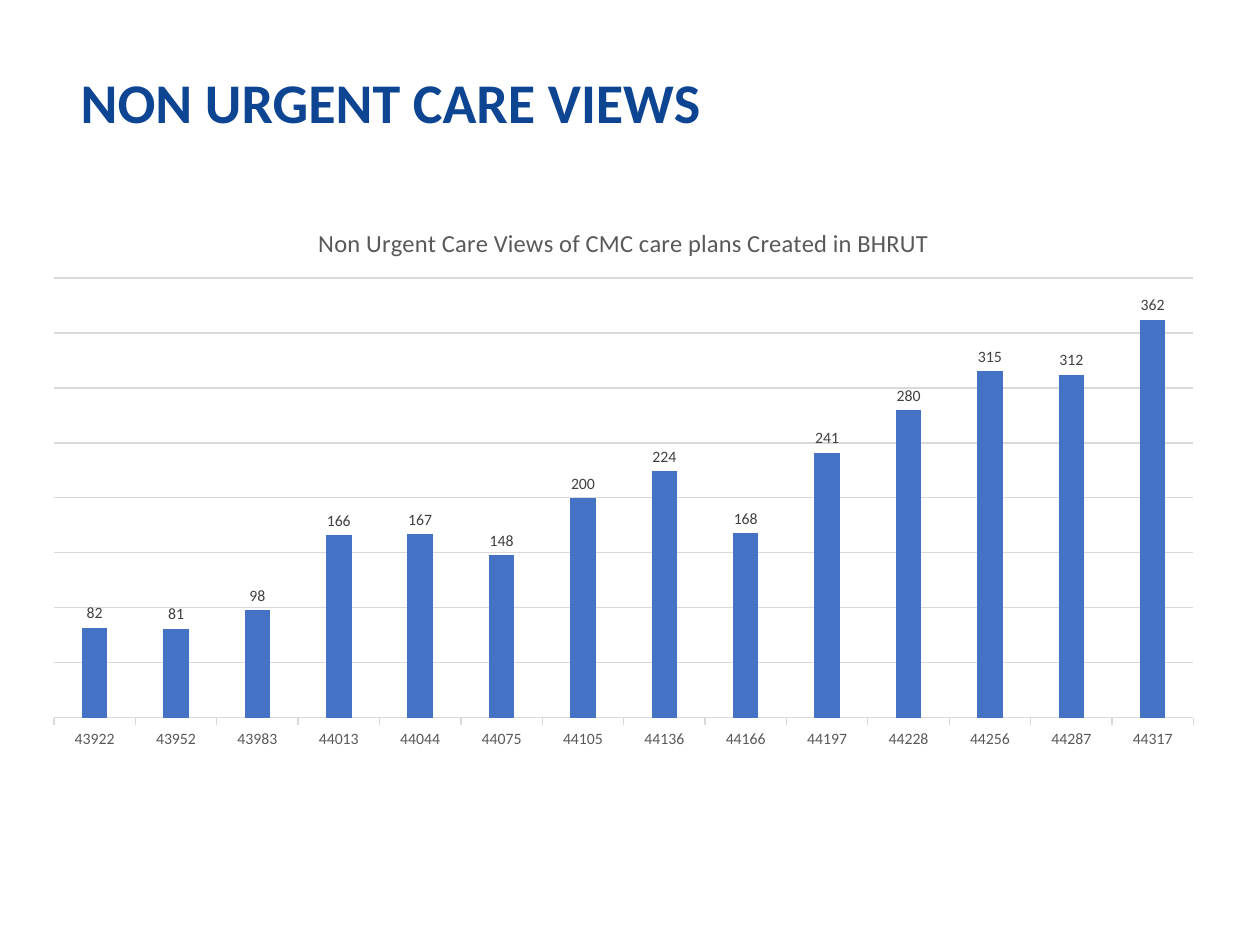
from dataclasses import dataclass

from pptx import Presentation
from pptx.chart.data import CategoryChartData
from pptx.dml.color import RGBColor
from pptx.enum import chart as ch, text
from pptx.util import Inches, Pt


@dataclass(frozen=True)
class Theme:
    face: str = "Calibri"
    navy: str = "0E4593"
    blue: str = "4472C4"
    black: str = "000000"
    dark: str = "404040"
    gray: str = "595959"
    rule: str = "D9D9D9"
    head: int = 32
    title: int = 14
    base: int = 10
    small: int = 9


THEME = Theme()
LEFT, WIDTH = Inches(0.24), Inches(9.42)
MONTHS = [43922, 43952, 43983, 44013, 44044, 44075, 44105,
          44136, 44166, 44197, 44228, 44256, 44287, 44317]
VIEWS = [82, 81, 98, 166, 167, 148, 200, 224, 168, 241, 280, 315, 312, 362]


def style(font, size, color, bold=False):
    font.name = THEME.face
    font.size = Pt(size)
    font.bold = bold
    font.color.rgb = RGBColor.from_string(color)


def rule(line):
    line.width = Pt(0.75)
    line.color.rgb = RGBColor.from_string(THEME.rule)


def add_title(slide, words):
    box = slide.shapes.title
    box.left, box.top, box.width, box.height = LEFT, Inches(0.36), WIDTH, Inches(0.88)
    frame = box.text_frame
    frame.text = words
    frame.word_wrap = True
    frame.auto_size = text.MSO_AUTO_SIZE.NONE
    frame.vertical_anchor = text.MSO_ANCHOR.MIDDLE
    frame.margin_left = Inches(0.4)
    para = frame.paragraphs[0]
    para.alignment = text.PP_ALIGN.LEFT
    style(para.font, THEME.head, THEME.navy, bold=True)


def add_bars(slide, title):
    data = CategoryChartData()
    data.categories = [str(month) for month in MONTHS]
    data.add_series("Series 1", VIEWS)
    chart = slide.shapes.add_chart(
        ch.XL_CHART_TYPE.COLUMN_CLUSTERED,
        LEFT, Inches(1.62), WIDTH, Inches(4.41), data).chart
    style(chart.font, THEME.base, THEME.black)
    chart.has_legend = False
    chart.has_title = True
    frame = chart.chart_title.text_frame
    frame.text = title
    style(frame.paragraphs[0].font, THEME.title, THEME.gray)
    chart.chart_title.include_in_layout = False
    format_axes(chart)
    format_plot(chart.plots[0])


def format_axes(chart):
    months, views = chart.category_axis, chart.value_axis
    style(months.tick_labels.font, THEME.small, THEME.gray)
    months.major_tick_mark = ch.XL_TICK_MARK.OUTSIDE
    months.minor_tick_mark = ch.XL_TICK_MARK.NONE
    rule(months.format.line)
    views.visible = False
    views.minimum_scale, views.maximum_scale, views.major_unit = 0, 400, 50
    views.has_major_gridlines = True
    rule(views.major_gridlines.format.line)


def format_plot(plot):
    plot.gap_width, plot.overlap = 219, -27
    plot.vary_by_categories = False
    bars = plot.series[0]
    bars.invert_if_negative = False
    bars.format.fill.solid()
    bars.format.fill.fore_color.rgb = RGBColor.from_string(THEME.blue)
    labels = bars.data_labels
    labels.show_value = True
    labels.position = ch.XL_LABEL_POSITION.OUTSIDE_END
    style(labels.font, THEME.small, THEME.dark)


def main():
    deck = Presentation()
    deck.slide_width, deck.slide_height = Inches(10), Inches(7.5)
    slide = deck.slides.add_slide(deck.slide_layouts[5])
    add_title(slide, "NON URGENT CARE VIEWS")
    add_bars(slide, "Non Urgent Care Views of CMC care plans Created in BHRUT")
    deck.save("out.pptx")


if __name__ == "__main__":
    main()
